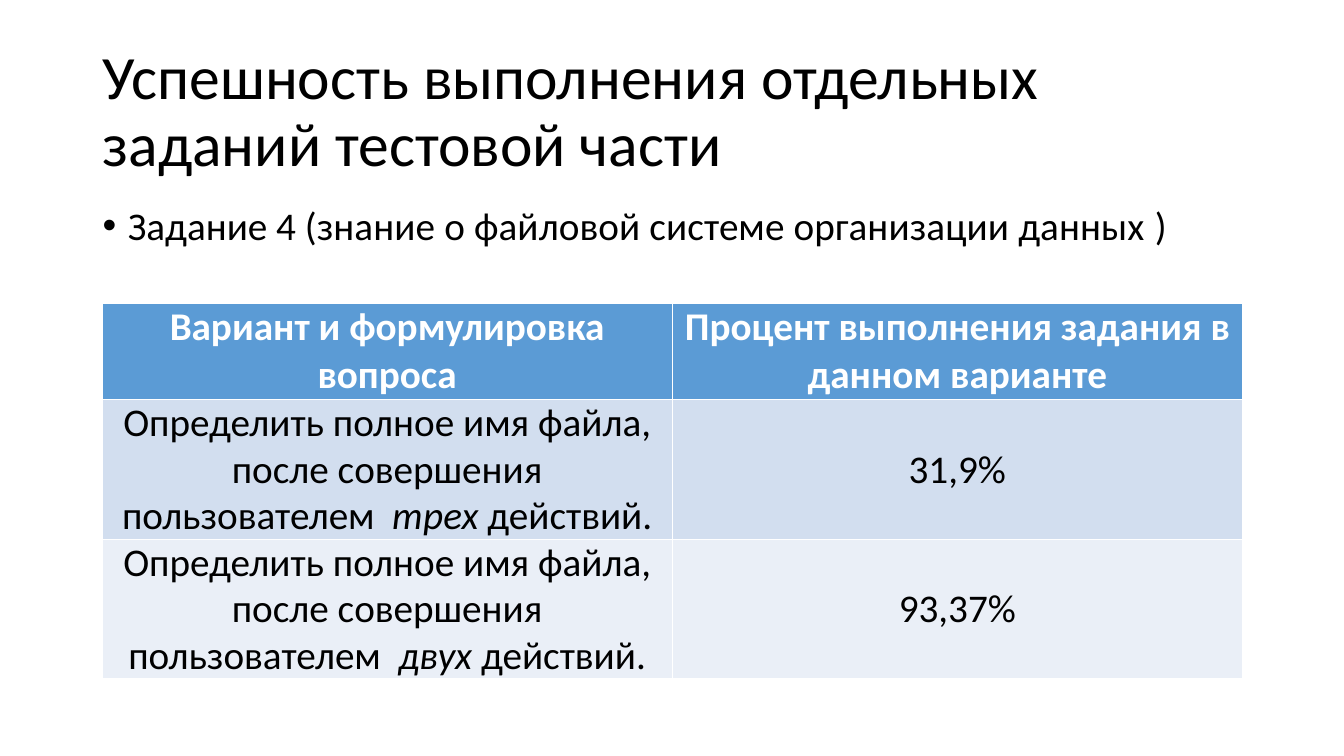
"""Build a slide with a results table for test task 4."""
from pptx import Presentation
from pptx.dml.color import RGBColor
from pptx.enum.text import MSO_ANCHOR, MSO_AUTO_SIZE, PP_ALIGN
from pptx.util import Cm, Pt

LEFT, CENTER = PP_ALIGN.LEFT, PP_ALIGN.CENTER
TOP, MIDDLE = MSO_ANCHOR.TOP, MSO_ANCHOR.MIDDLE
NO_FIT = MSO_AUTO_SIZE.NONE

FONT = "Calibri"
BLACK, WHITE = "000000", "FFFFFF"
ROW_FILLS = ["5B9BD5", "D2DEEF", "EAEFF7"]
ROW_HEIGHTS = [2.4, 3.52, 3.52]
COL_WIDTH = 14.37

TITLE = "Успешность выполнения отдельных заданий тестовой части"
TASK = ["Задание 4 (", "знание о файловой системе организации данных ", ")"]
QUESTION = "Определить полное имя файла, после совершения пользователем  "
ROWS = [
    [["Вариант и формулировка вопроса"],
     ["Процент выполнения задания в данном варианте"]],
    [[QUESTION, "трех", " действий."], ["31,9%"]],
    [[QUESTION, "двух", " действий."], ["93,37%"]],
]


def rgb(color):
    return RGBColor.from_string(color)


def add_run(p, text, size, color=BLACK, bold=False, italic=False):
    r = p.add_run()
    r.text = text
    r.font.name, r.font.size = FONT, Pt(size)
    r.font.bold, r.font.italic = bold, italic
    r.font.color.rgb = rgb(color)
    return r


def place(sp, left, top, width, height, anchor):
    sp.left, sp.top, sp.width, sp.height = map(Cm, (left, top, width, height))
    tf = sp.text_frame
    tf.auto_size, tf.word_wrap, tf.vertical_anchor = NO_FIT, True, anchor
    p = tf.paragraphs[0]
    p.alignment, p.line_spacing = LEFT, 0.9
    return p


def add_title(s):
    p = place(s.shapes.title, 2.33, 1.01, 29.21, 3.68, MIDDLE)
    add_run(p, TITLE, 44)


def add_task(s):
    p = place(s.placeholders[1], 2.33, 5.07, 29.21, 12.09, TOP)
    p.space_before = Pt(10)
    pPr = p._p.get_or_add_pPr()
    pPr.set("marL", str(Cm(0.64)))
    pPr.set("indent", str(-Cm(0.64)))
    for i, text in enumerate(TASK):
        r = add_run(p, text, 28)
        if i == 1:
            r.font._element.set("spc", "10")


def add_results(s):
    tbl = s.shapes.add_table(len(ROWS), 2, Cm(2.57), Cm(7.65),
                             Cm(2 * COL_WIDTH), Cm(sum(ROW_HEIGHTS))).table
    for col in tbl.columns:
        col.width = Cm(COL_WIDTH)
    for i, row in enumerate(ROWS):
        tbl.rows[i].height = Cm(ROW_HEIGHTS[i])
        header = i == 0
        for j, parts in enumerate(row):
            cell = tbl.cell(i, j)
            cell.fill.solid()
            cell.fill.fore_color.rgb = rgb(ROW_FILLS[i])
            cell.vertical_anchor = MIDDLE
            cell.margin_left = cell.margin_right = Cm(0.13)
            cell.margin_top = cell.margin_bottom = 0
            p = cell.text_frame.paragraphs[0]
            p.alignment = CENTER
            p.line_spacing = 1.0 if header else 0.97
            for k, text in enumerate(parts):
                add_run(p, text, 28, WHITE if header else BLACK,
                        bold=header, italic=k == 1)


def main():
    prs = Presentation()
    prs.slide_width, prs.slide_height = Cm(33.87), Cm(19.05)
    s = prs.slides.add_slide(prs.slide_layouts[1])
    add_title(s)
    add_task(s)
    add_results(s)
    prs.save("out.pptx")


if __name__ == "__main__":
    main()
